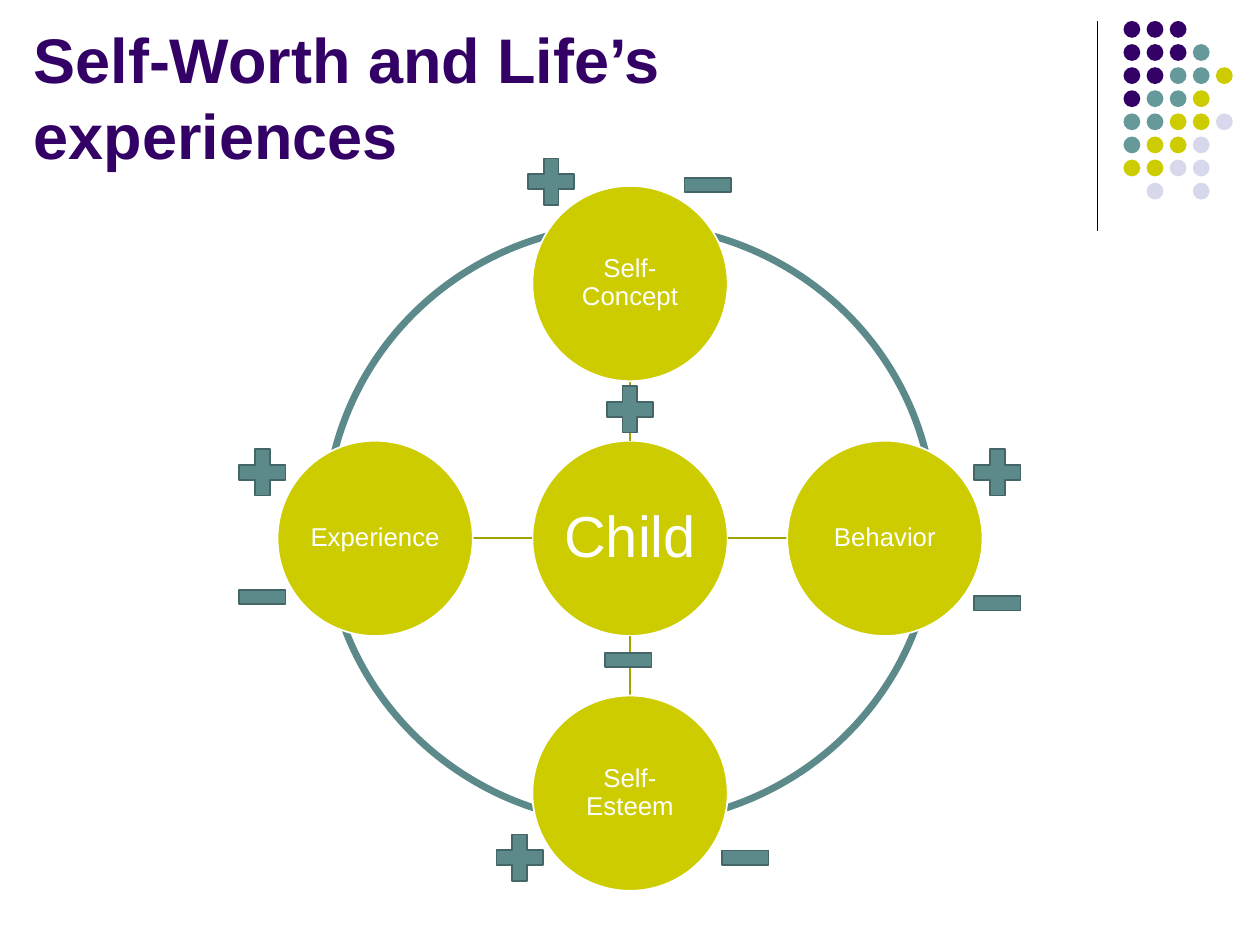
from dataclasses import dataclass

from lxml import etree
from pptx import Presentation
from pptx import util as u
from pptx.dml.color import RGBColor
from pptx.enum import shapes, text
from pptx.oxml.ns import qn


@dataclass(frozen=True)
class Theme:
    font: str = "Arial"
    purple: str = "330066"
    teal: str = "669999"
    lime: str = "CCCC00"
    pale: str = "D8D8EC"
    mark: str = "5C8A8A"
    mark_edge: str = "446666"
    spoke: str = "A3A300"
    white: str = "FFFFFF"
    black: str = "000000"
    title_pt: float = 36
    hub_pt: float = 33
    node_pt: float = 14.7


@dataclass(frozen=True)
class Node:
    label: str
    dx: int  # steps from the hub
    dy: int
    size: float


@dataclass(frozen=True)
class Mark:
    kind: shapes.MSO_SHAPE
    col: float
    row: float
    height: float


T = Theme()
CELL = u.Inches(10) / 120  # page grid: 120 columns by 90 rows
HUB_COL, HUB_ROW = 60, 51.27
STEP, DIAMETER = 24.27, 18.6
DOT_COL, DOT_ROW, DOT_PITCH, DOT_SIZE = 107, 2, 2.2, 1.6

NODES = [
    Node("Child", 0, 0, T.hub_pt),
    Node("Self-Concept", 0, -1, T.node_pt),
    Node("Behavior", 1, 0, T.node_pt),
    Node("Self-Esteem", 0, 1, T.node_pt),
    Node("Experience", -1, 0, T.node_pt),
]
PLUSES = [(22, 42), (92, 42), (46.5, 78.7), (49.5, 14.3), (57, 36)]
MINUSES = [(22, 54), (64.4, 14.75), (92, 54.6), (56.85, 60), (68, 78.8)]
MARKS = [Mark(shapes.MSO_SHAPE.MATH_PLUS, c, r, 6) for c, r in PLUSES]
MARKS += [Mark(shapes.MSO_SHAPE.MATH_MINUS, c, r, 5.75) for c, r in MINUSES]

DOT_COLORS = {"P": T.purple, "T": T.teal, "L": T.lime, "W": T.pale}
DOT_ROWS = ["PPP", "PPPT", "PPTTL", "PTTL", "TTLLW", "TLLW", "LLWW", " W W"]


def cells(*values: float) -> list[int]:
    return [u.Emu(round(v * CELL)) for v in values]


def rgb(color: str) -> RGBColor:
    return RGBColor.from_string(color)


def add_shape(s, kind, box: tuple, fill: str | None, line: str | None, width: float = 1):
    sp = s.shapes.add_shape(kind, *cells(*box))
    sp.shadow.inherit = False
    if fill:
        sp.fill.solid()
        sp.fill.fore_color.rgb = rgb(fill)
    else:
        sp.fill.background()
    if line:
        sp.line.color.rgb = rgb(line)
        sp.line.width = u.Pt(width)
    else:
        sp.line.fill.background()
    return sp


def add_line(s, start: tuple, end: tuple, color: str, width: float) -> None:
    cx = s.shapes.add_connector(shapes.MSO_CONNECTOR.STRAIGHT, *cells(*start, *end))
    cx.line.color.rgb = rgb(color)
    cx.line.width = u.Pt(width)
    etree.SubElement(cx._element.spPr, qn("a:effectLst"))


def style_run(p, size: float, color: str, bold: bool = False) -> None:
    for r in p.runs:
        r.font.name = T.font
        r.font.size = u.Pt(size)
        r.font.bold = bold
        r.font.color.rgb = rgb(color)


def add_title(s, title: str) -> None:
    sp = s.shapes.title
    sp.left, sp.top, sp.width, sp.height = cells(2, 2, 90, 15)
    tf = sp.text_frame
    tf.text = title
    tf.word_wrap = True
    tf.auto_size = text.MSO_AUTO_SIZE.NONE
    tf.vertical_anchor = text.MSO_ANCHOR.BOTTOM
    p = tf.paragraphs[0]
    p.alignment = text.PP_ALIGN.LEFT
    style_run(p, T.title_pt, T.purple, bold=True)


def add_node(s, node: Node) -> None:
    col, row = HUB_COL + node.dx * STEP, HUB_ROW + node.dy * STEP
    radius = DIAMETER / 2
    if node.dx or node.dy:  # spoke from the hub's edge to the node's edge
        near, far = radius, STEP - radius
        add_line(s, (HUB_COL + node.dx * near, HUB_ROW + node.dy * near),
                 (HUB_COL + node.dx * far, HUB_ROW + node.dy * far), T.spoke, 1)
    sp = add_shape(s, shapes.MSO_SHAPE.OVAL,
                   (col - radius, row - radius, DIAMETER, DIAMETER), T.lime, T.white)
    tf = sp.text_frame
    tf.text = node.label
    tf.word_wrap = True
    tf.vertical_anchor = text.MSO_ANCHOR.MIDDLE
    tf.margin_left = tf.margin_right = tf.margin_top = tf.margin_bottom = u.Inches(0.01)
    p = tf.paragraphs[0]
    p.alignment = text.PP_ALIGN.CENTER
    p.line_spacing = 0.9
    style_run(p, node.size, T.white)


def add_dots(s) -> None:
    for j, pattern in enumerate(DOT_ROWS):
        for i, key in enumerate(pattern):
            if key in DOT_COLORS:
                box = (DOT_COL + i * DOT_PITCH, DOT_ROW + j * DOT_PITCH, DOT_SIZE, DOT_SIZE)
                add_shape(s, shapes.MSO_SHAPE.OVAL, box, DOT_COLORS[key], None)


def main() -> None:
    prs = Presentation()
    prs.slide_width, prs.slide_height = u.Inches(10), u.Inches(7.5)
    s = prs.slides.add_slide(prs.slide_layouts.get_by_name("Title Only"))

    # Corner decoration and title
    add_line(s, (104.5, 2), (104.5, 22), T.black, 0.75)
    add_dots(s)
    add_title(s, "Self-Worth and Life’s experiences")

    # Wheel: outer ring, then hub and nodes
    add_shape(s, shapes.MSO_SHAPE.OVAL, (31, 21.4, 58, 57), None, T.mark, 4)
    for node in NODES:
        add_node(s, node)

    # Plus and minus signs
    for mark in MARKS:
        add_shape(s, mark.kind, (mark.col, mark.row, 6, mark.height), T.mark, T.mark_edge)

    prs.save("out.pptx")


if __name__ == "__main__":
    main()
